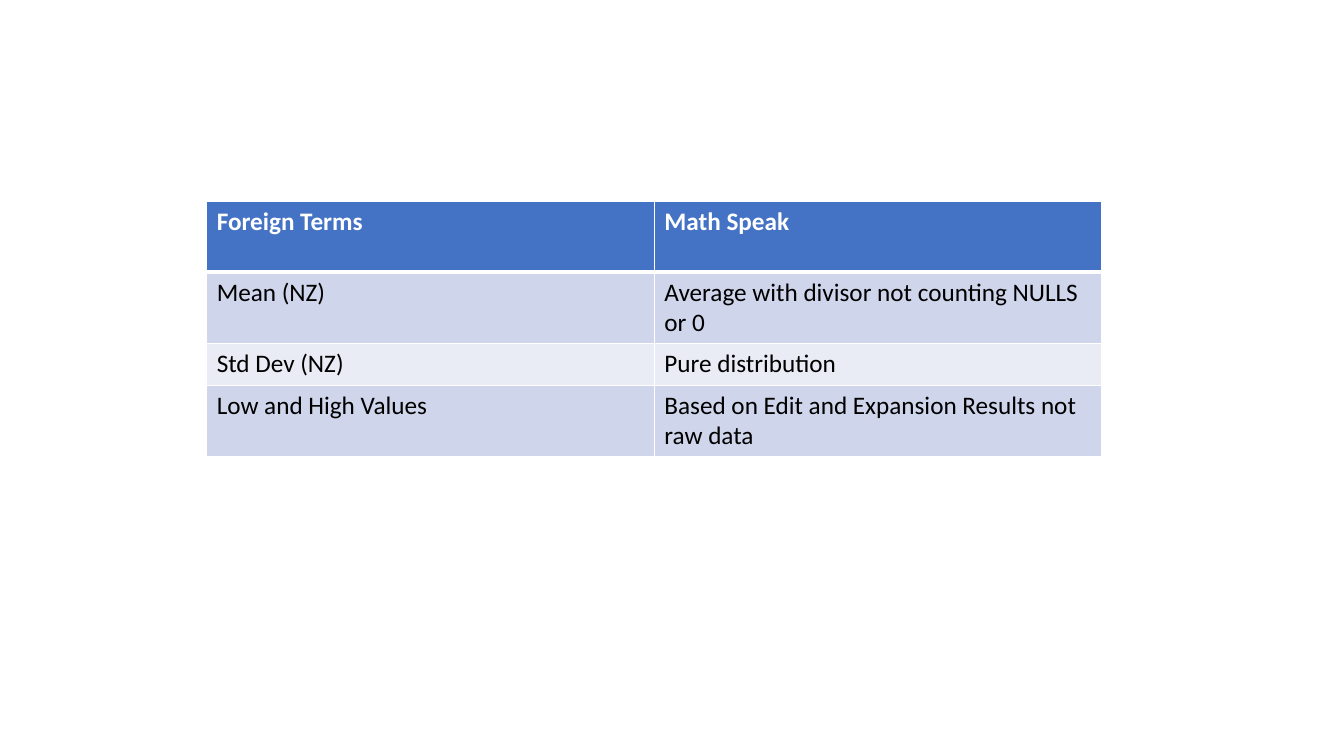
from lxml import etree
from pptx import Presentation
from pptx.dml.color import RGBColor
from pptx.oxml.ns import qn
from pptx.util import Inches, Pt

BLANK_LAYOUT = 6
WHITE, BLACK, BLUE = "FFFFFF", "000000", "4472C4"
BANDS = ["CFD5EA", "E9EBF5"]
TERMS = [
    ("Foreign Terms", "Math Speak"),
    ("Mean (NZ)", "Average with divisor not counting NULLS or 0"),
    ("Std Dev (NZ)", "Pure distribution"),
    ("Low and High Values", "Based on Edit and Expansion Results not raw data"),
]
ROW_HEIGHTS = [0.7, 0.71, 0.41, 0.7]


def color(value):
    """Turn a hex string into a colour."""
    return RGBColor.from_string(value)


class SlideBuilder:
    """Holds the text style and the current slide."""

    def __init__(self, slide, font_name="Calibri", font_size=18):
        """Keep the slide and its style."""
        self.slide = slide
        self.font_name = font_name
        self.font_size = font_size

    def border(self, cell, side, width):
        """Draw one white side of a cell."""
        properties = cell._tc.get_or_add_tcPr()
        line = etree.SubElement(properties, qn(f"a:ln{side}"), w=str(Pt(width)))
        fill = etree.SubElement(line, qn("a:solidFill"))
        etree.SubElement(fill, qn("a:srgbClr"), val=WHITE)

    def cell(self, cell, text, fill, text_color, bold, widths):
        """Fill, outline and write one cell."""
        for side, width in zip("LRTB", widths):
            self.border(cell, side, width)
        cell.fill.solid()
        cell.fill.fore_color.rgb = color(fill)
        run = cell.text_frame.paragraphs[0].add_run()
        run.text = text
        run.font.name = self.font_name
        run.font.size = Pt(self.font_size)
        run.font.bold = bold
        run.font.color.rgb = color(text_color)

    def table(self, rows, left, top, width, heights):
        """Add a table with a header row and banded body rows."""
        column_count = len(rows[0])
        table = self.slide.shapes.add_table(
            len(rows), column_count, Inches(left), Inches(top),
            Inches(width), Inches(sum(heights))).table
        for column in table.columns:
            column.width = Inches(width / column_count)
        for index, (texts, height) in enumerate(zip(rows, heights)):
            table.rows[index].height = Inches(height)
            header = index == 0
            fill = BLUE if header else BANDS[(index - 1) % len(BANDS)]
            widths = (1, 1, 3 if index == 1 else 1, 3 if header else 1)
            for column, text in enumerate(texts):
                self.cell(table.cell(index, column), text, fill,
                          WHITE if header else BLACK, header, widths)


def main():
    """Build and save the slide."""
    presentation = Presentation()
    presentation.slide_width = Inches(13.33)
    presentation.slide_height = Inches(7.5)
    layout = presentation.slide_layouts[BLANK_LAYOUT]
    builder = SlideBuilder(presentation.slides.add_slide(layout))
    builder.table(TERMS, 2.05, 2, 8.88, ROW_HEIGHTS)
    presentation.save("out.pptx")


if __name__ == "__main__":
    main()
